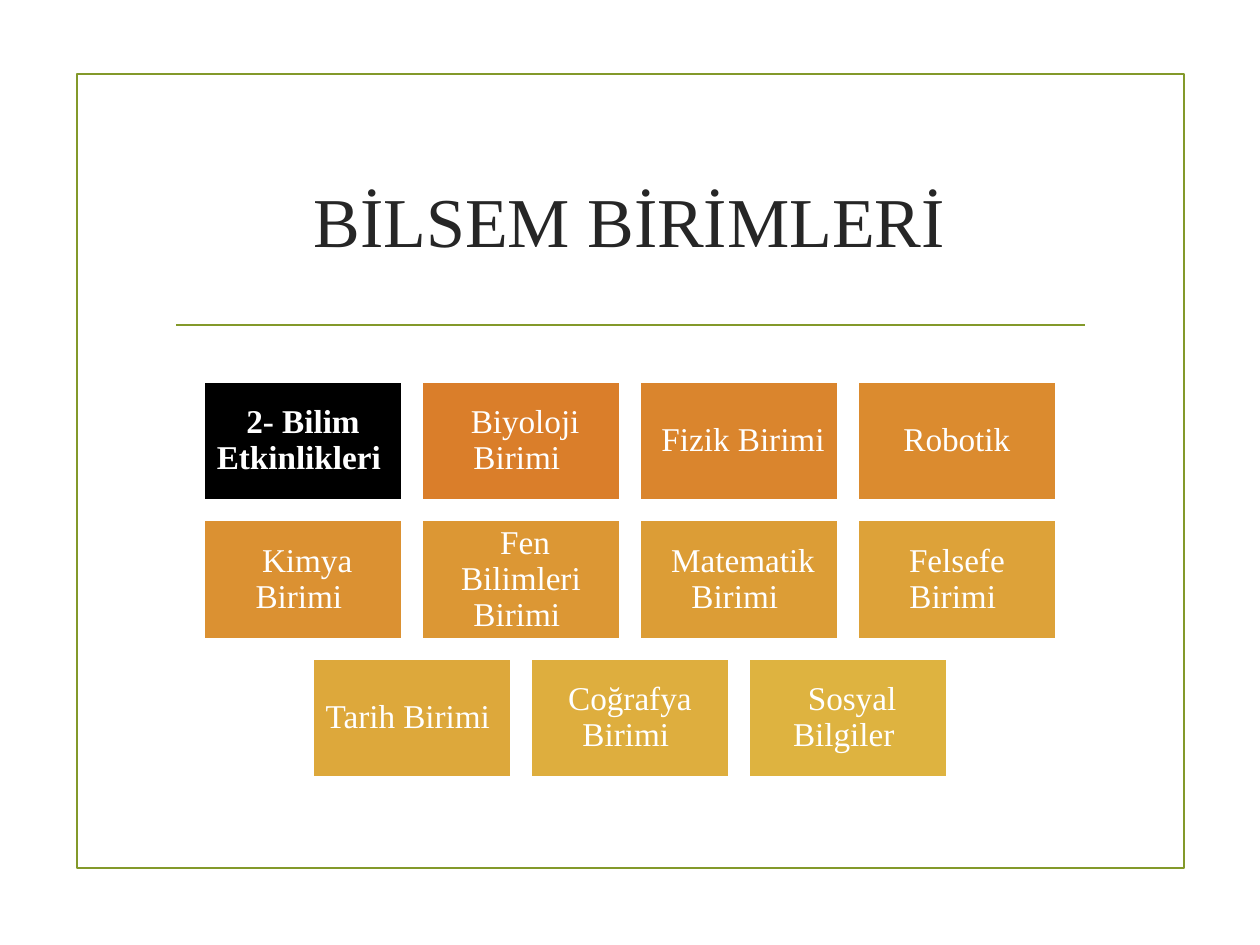
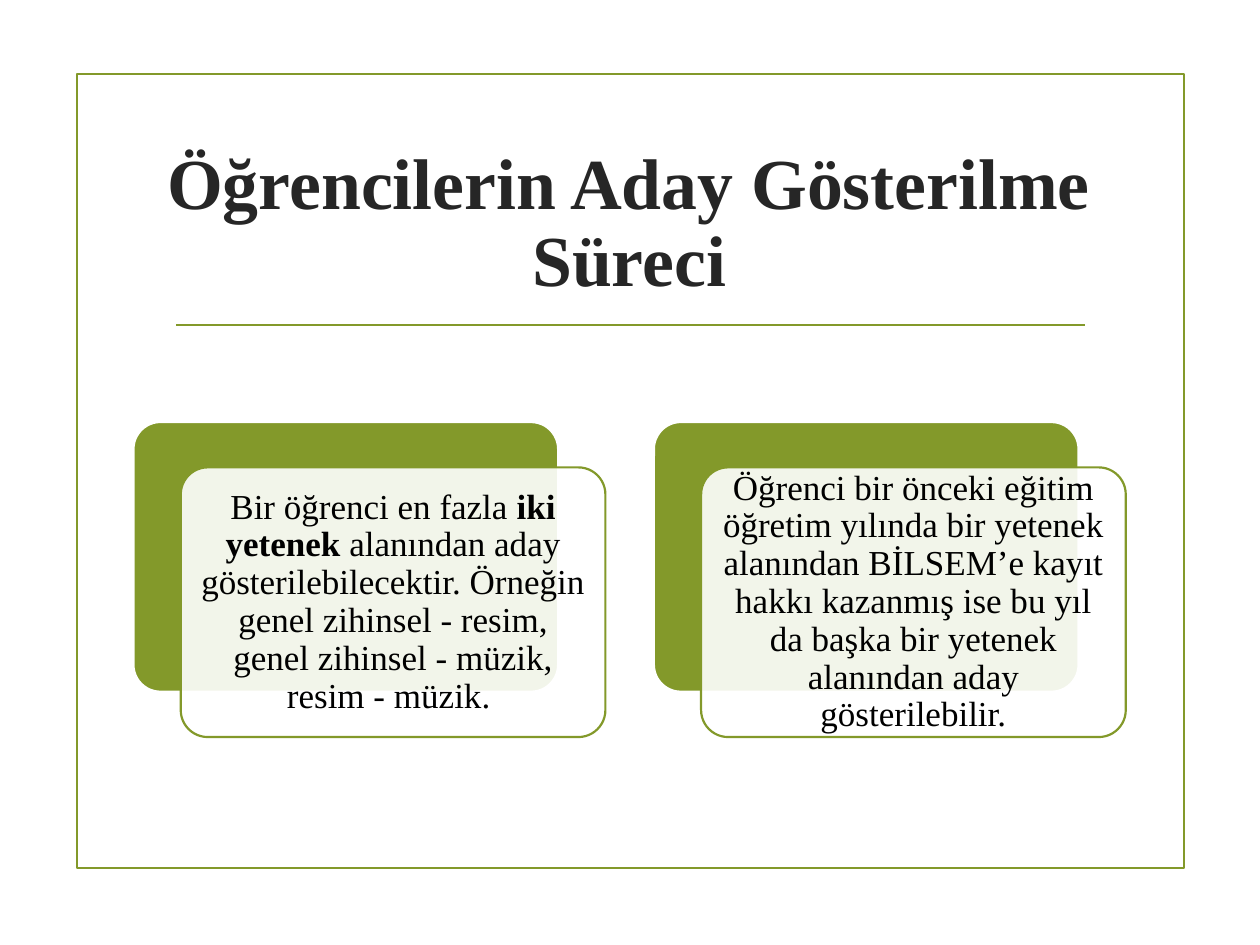
from lxml.etree import SubElement
from pptx import Presentation
from pptx.dml.color import RGBColor
from pptx.enum.shapes import MSO_CONNECTOR, MSO_SHAPE
from pptx.enum.text import MSO_ANCHOR, PP_ALIGN
from pptx.oxml.ns import qn
from pptx.util import Pt

PX = 9144  # 100 px to the inch
FONT = "Times New Roman"
HEX = {"olive": "83992A", "white": "FFFFFF", "black": "000000", "ink": "262626"}
SHADES = ["000000", "DA7E2A", "DA852D", "DB8B2F", "DB9132", "DC9734",
          "DC9D36", "DDA239", "DDA83B", "DEAE3E", "DEB340"]
UNITS = [
    ["2- Bilim Etkinlikleri ", " Biyoloji Birimi ", " Fizik Birimi ", " Robotik "],
    [" Kimya Birimi ", " Fen Bilimleri Birimi ", " Matematik Birimi ", "Felsefe Birimi "],
    ["Tarih Birimi ", "Coğrafya Birimi ", " Sosyal Bilgiler "],
]
RULES = [
    [("Bir öğrenci en fazla ", False), ("iki yetenek ", True),
     ("alanından aday gösterilebilecektir. Örneğin genel zihinsel ‐ resim, "
      "genel zihinsel ‐ müzik, resim ‐ müzik. ", False)],
    [("Öğrenci bir önceki eğitim öğretim yılında bir yetenek alanından "
      "BİLSEM’e kayıt hakkı kazanmış ise bu yıl da başka bir yetenek "
      "alanından aday gösterilebilir.", False)],
]


def rgb(name):
    return RGBColor.from_string(HEX.get(name, name))


def assign(target, values):
    for key, value in values.items():
        setattr(target, key, value)


class Deck:
    def __init__(self):
        self.prs = Presentation()
        assign(self.prs, {"slide_width": 1000 * PX, "slide_height": 750 * PX})
        self.slide = None

    def page(self, title, size, bold=False, top=5):
        """Start a slide with the shared frame, rule and title."""
        self.slide = self.prs.slides.add_slide(self.prs.slide_layouts[6])
        self.shape((61, 59, 879, 630), None, "olive")
        self.rule(140, 258, 861)
        box = self.slide.shapes.add_textbox(*[n * PX for n in (106, 107, 787, 143)])
        self.text(box, [(title, bold)], size, "ink", (10, top, 10, 5))

    def shape(self, rect, fill, line, adj=None, alpha=None):
        kind = MSO_SHAPE.RECTANGLE if adj is None else MSO_SHAPE.ROUNDED_RECTANGLE
        item = self.slide.shapes.add_shape(kind, *[round(n * PX) for n in rect])
        item.shadow.inherit = False
        if adj is not None:
            item.adjustments[0] = adj
        if fill:
            item.fill.solid()
            item.fill.fore_color.rgb = rgb(fill)
        else:
            item.fill.background()
        if alpha:
            tone = item.fill._xPr.find(qn("a:solidFill"))[0]
            SubElement(tone, qn("a:alpha")).set("val", str(alpha * 1000))
        item.line.color.rgb = rgb(line)
        item.line.width = Pt(1.25)
        return item

    def rule(self, left, top, right):
        line = self.slide.shapes.add_connector(
            MSO_CONNECTOR.STRAIGHT, left * PX, top * PX, right * PX, top * PX)
        line.line.color.rgb = rgb("olive")
        line.line.width = Pt(1.25)
        SubElement(line._element.spPr, qn("a:effectLst"))

    def text(self, item, runs, size, color, inset=(8, 8, 8, 8)):
        """Fill a shape with one centred paragraph of (words, bold) runs."""
        frame = item.text_frame
        assign(frame, {"word_wrap": True, "vertical_anchor": MSO_ANCHOR.MIDDLE})
        for side, gap in zip(("left", "top", "right", "bottom"), inset):
            setattr(frame, f"margin_{side}", gap * PX)
        para = frame.paragraphs[0]
        assign(para, {"alignment": PP_ALIGN.CENTER, "line_spacing": 0.9})
        for words, bold in runs:
            run = para.add_run()
            run.text = words
            assign(run.font, {"name": FONT, "size": Pt(size), "bold": bold})
            run.font.color.rgb = rgb(color)


def units(deck):
    deck.page("BİLSEM BİRİMLERİ", 40)
    wide, high, gap = 157, 94, 16
    shades = iter(SHADES)
    for row, names in enumerate(UNITS):
        span = len(names) * (wide + gap) - gap
        for col, name in enumerate(names):
            left = 500 - span / 2 + col * (wide + gap)
            tile = deck.shape((left, 303 + row * 110, wide, high), next(shades), "white")
            deck.text(tile, [(name, row == col == 0)], 19, "white")


def process(deck):
    deck.page("Öğrencilerin Aday Gösterilme Süreci", 41, True)
    for col, runs in enumerate(RULES):
        left = 106 + col * 413
        deck.shape((left, 335, 337, 214), "olive", "white", 0.1)
        card = deck.shape((left + 37.5, 371, 337, 214), "white", "olive", 0.1, 90)
        deck.text(card, runs, 20, "black")


def main():
    deck = Deck()
    units(deck)
    process(deck)
    deck.prs.save("out.pptx")


if __name__ == "__main__":
    main()
